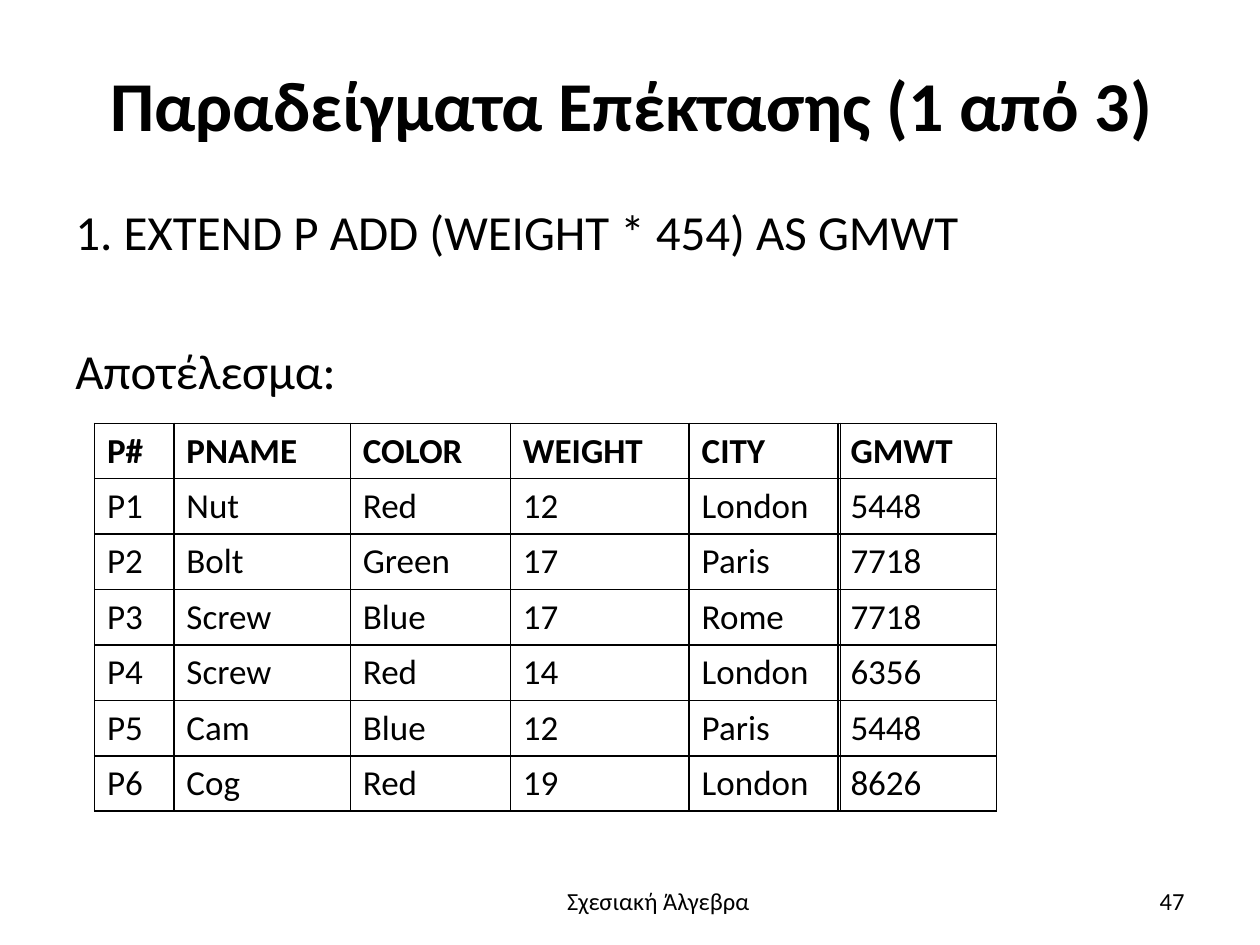
from dataclasses import dataclass

from lxml.etree import SubElement
from pptx import Presentation
from pptx.dml.color import RGBColor
from pptx.enum.text import MSO_ANCHOR as Anchor, PP_ALIGN as Align
from pptx.oxml.ns import qn
from pptx.util import Inches, Pt


@dataclass(frozen=True)
class Theme:
    font: str = "Calibri"
    ink: str = "000000"
    title: int = 40
    body: int = 28
    cell: int = 20
    footer: int = 14
    rule: int = 1


THEME = Theme()

PARTS = [
    ["P#", "PNAME", "COLOR", "WEIGHT", "CITY"],
    ["P1", "Nut", "Red", "12", "London"],
    ["P2", "Bolt", "Green", "17", "Paris"],
    ["P3", "Screw", "Blue", "17", "Rome"],
    ["P4", "Screw", "Red", "14", "London"],
    ["P5", "Cam", "Blue", "12", "Paris"],
    ["P6", "Cog", "Red", "19", "London"],
]
GRAM_WEIGHTS = [["GMWT"], ["5448"], ["7718"], ["7718"], ["6356"], ["5448"], ["8626"]]
TABLE_TOP = 3.36
ROW_HEIGHT = 0.44
HANGING_INDENT = 0.38


def style_paragraph(para, size, align, bold=False):
    para.alignment = align
    font = para.font
    font.name, font.size, font.bold = THEME.font, Pt(size), bold
    font.color.rgb = RGBColor.from_string(THEME.ink)


def add_text(page, place, lines, size, align=Align.LEFT, bold=False,
             anchor=Anchor.TOP, gap=0):
    """Add a text box with one paragraph per line, gap points apart."""
    box = page.shapes.add_textbox(*map(Inches, place))
    frame = box.text_frame
    frame.word_wrap = True
    frame.vertical_anchor = anchor
    frame.text = "\n".join(lines)
    for index, para in enumerate(frame.paragraphs):
        style_paragraph(para, size, align, bold)
        para.space_before = Pt(gap if index else 0)


def set_borders(cell):
    props = cell._tc.get_or_add_tcPr()
    for position, side in enumerate(("lnL", "lnR", "lnT", "lnB")):
        line = SubElement(props, qn(f"a:{side}"), w=str(Pt(THEME.rule)))
        fill = SubElement(line, qn("a:solidFill"))
        SubElement(fill, qn("a:srgbClr"), val=THEME.ink)
        props.insert(position, line)  # borders come before the cell fill


def set_hanging_indent(para, indent):
    props = para._p.get_or_add_pPr()
    props.set("marL", str(Inches(indent)))
    props.set("indent", str(-Inches(indent)))


def add_grid(page, left, widths, rows, indent=0):
    """Add a ruled table with a bold first row."""
    height = ROW_HEIGHT * len(rows)
    place = map(Inches, (left, TABLE_TOP, sum(widths), height))
    table = page.shapes.add_table(len(rows), len(widths), *place).table
    table.horz_banding = table.first_row = False
    for column, width in zip(table.columns, widths):
        column.width = Inches(width)
    for row_index, (row, values) in enumerate(zip(table.rows, rows)):
        row.height = Inches(ROW_HEIGHT)
        for cell, value in zip(row.cells, values):
            cell.text = value
            cell.fill.background()
            set_borders(cell)
            para = cell.text_frame.paragraphs[0]
            style_paragraph(para, THEME.cell, Align.JUSTIFY, bold=row_index == 0)
            if indent:
                set_hanging_indent(para, indent)


def main():
    deck = Presentation()
    deck.slide_width, deck.slide_height = Inches(10), Inches(7.5)
    page = deck.slides.add_slide(deck.slide_layouts[6])

    add_text(page, (0.51, 0.09, 9.13, 1.46), ["Παραδείγματα Επέκτασης (1 από 3) "],
             THEME.title, Align.CENTER, bold=True, anchor=Anchor.MIDDLE)
    add_text(page, (0.5, 1.55, 8.99, 5.12),
             ["1. EXTEND P ADD (WEIGHT * 454) AS GMWT", "Αποτέλεσμα:"],
             THEME.body, gap=46)
    add_grid(page, 0.75, [0.63, 1.4, 1.27, 1.42, 1.2], PARTS, HANGING_INDENT)
    add_grid(page, 6.65, [1.26], GRAM_WEIGHTS)
    add_text(page, (3.48, 6.98, 3.49, 0.55), ["Σχεσιακή Άλγεβρα"],
             THEME.footer, Align.CENTER)
    add_text(page, (7.17, 6.95, 2.33, 0.4), ["47"],
             THEME.footer, Align.RIGHT, anchor=Anchor.MIDDLE)

    deck.save("out.pptx")


if __name__ == "__main__":
    main()
